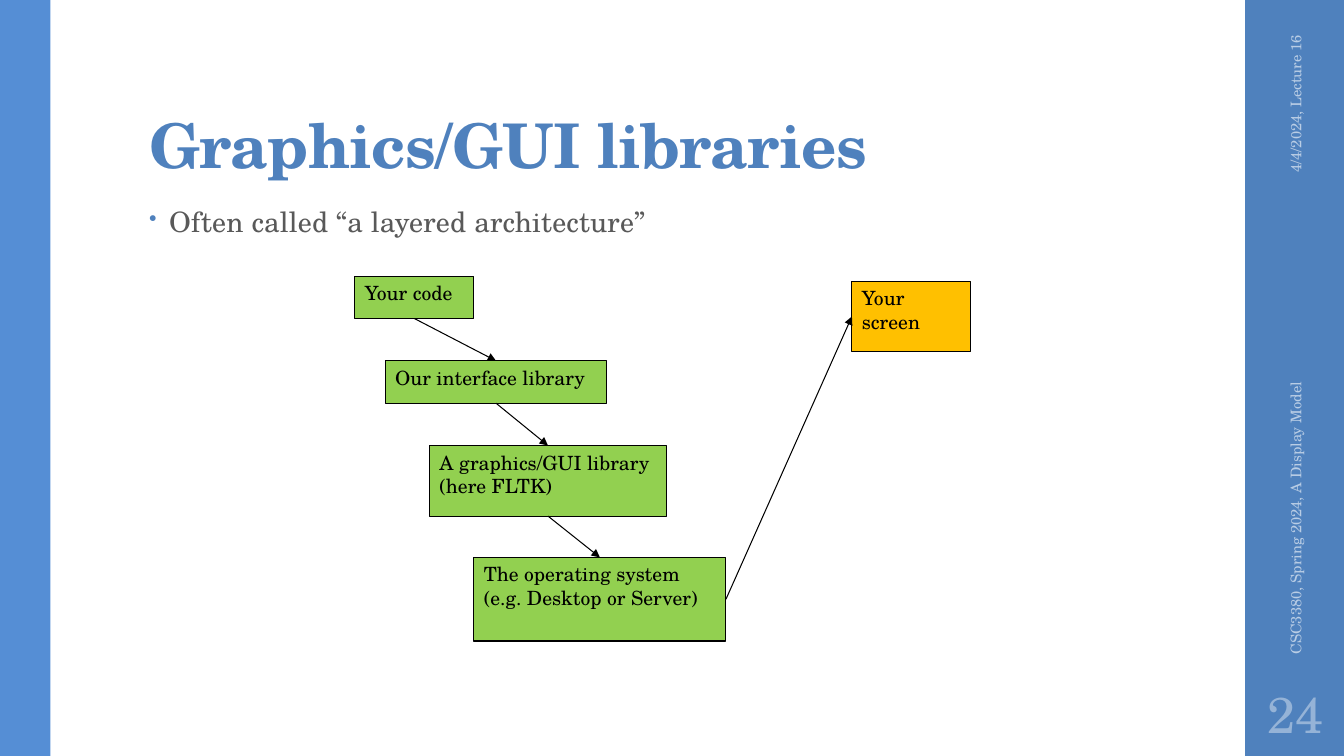
from lxml.etree import SubElement
from pptx import Presentation
from pptx.dml.color import RGBColor
from pptx.enum.shapes import MSO_CONNECTOR, MSO_SHAPE
from pptx.enum.text import MSO_ANCHOR, PP_ALIGN
from pptx.oxml.ns import qn
from pptx.util import Inches, Pt

TOP, LEFT, BOTTOM, RIGHT = range(4)


def color(hex_string):
    return RGBColor.from_string(hex_string)


class SlideBuilder:
    font = "TeX Gyre Schola"
    blue, ink = "4F81BD", "000000"
    green, amber = "92D050", "FFC000"
    line_width = Pt(0.75)

    def __init__(self, slide):
        self.s = slide

    def fill_text(self, tf, lines, size, fill, bold=False, spacing=None, **para):
        """Fill a text frame with one paragraph per line."""
        tf.word_wrap = True
        for i, line in enumerate(lines):
            p = tf.add_paragraph() if i else tf.paragraphs[0]
            for name, value in ({"alignment": PP_ALIGN.LEFT} | para).items():
                setattr(p, name, value)
            r = p.add_run()
            r.text = line
            fmt = {"name": self.font, "size": Pt(size), "bold": bold}
            for name, value in fmt.items():
                setattr(r.font, name, value)
            r.font.color.rgb = color(fill)
            if spacing is not None:
                r._r.get_or_add_rPr().set("spc", str(spacing))

    def text(self, at, line, size, fill, rotation=0, frame=None, **style):
        sp = self.s.shapes.add_textbox(*map(Inches, at))
        sp.rotation = rotation
        for name, value in (frame or {}).items():
            setattr(sp.text_frame, name, value)
        self.fill_text(sp.text_frame, [line], size, fill, **style)
        return sp

    def rect(self, at, fill, outlined=False):
        sp = self.s.shapes.add_shape(MSO_SHAPE.RECTANGLE, *map(Inches, at))
        sp.shadow.inherit = False
        sp.fill.solid()
        sp.fill.fore_color.rgb = color(fill)
        if outlined:
            sp.line.color.rgb = color(self.ink)
            sp.line.width = self.line_width
        else:
            sp.line.fill.background()
        return sp

    def box(self, at, fill, *lines):
        sp = self.rect(at, fill, outlined=True)
        sp.text_frame.vertical_anchor = MSO_ANCHOR.TOP
        self.fill_text(sp.text_frame, lines, 14, self.ink)
        return sp

    def arrow(self, start, start_side, end, end_side):
        c = self.s.shapes.add_connector(MSO_CONNECTOR.STRAIGHT, 0, 0, 0, 0)
        c.begin_connect(start, start_side)
        c.end_connect(end, end_side)
        c.line.color.rgb = color(self.ink)
        c.line.width = self.line_width
        spPr = c._element.spPr
        SubElement(spPr.find(qn("a:ln")), qn("a:tailEnd"), type="triangle")
        SubElement(spPr, qn("a:effectLst"))

    def bullet(self, sp, fill, char="•", percent=80, indent=0.2):
        for p in sp.text_frame.paragraphs:
            pPr = p._p.get_or_add_pPr()
            pPr.set("marL", str(Inches(indent)))
            pPr.set("indent", str(-Inches(indent)))
            SubElement(SubElement(pPr, qn("a:buClr")), qn("a:srgbClr"), val=fill)
            SubElement(pPr, qn("a:buSzPct"), val=str(percent * 1000))
            SubElement(pPr, qn("a:buChar"), char=char)


def main():
    prs = Presentation()
    prs.slide_width, prs.slide_height = Inches(13.33), Inches(7.5)
    b = SlideBuilder(prs.slides.add_slide(prs.slide_layouts[6]))

    # Side bars
    b.rect((12.35, 0, 0.98, 7.5), b.blue)
    b.rect((0, 0, 0.5, 7.5), "558ED5")

    # Title and bullet
    b.text((1.38, 0.32, 10.6, 1.53), "Graphics/GUI libraries", 44, b.blue,
           frame={"vertical_anchor": MSO_ANCHOR.BOTTOM, "margin_top": Inches(0.03)},
           bold=True, spacing=-50, line_spacing=0.9)
    body = b.text((1.38, 2, 9.4, 4.76), "Often called “a layered architecture”",
                  20, "595959", spacing=10, line_spacing=0.95,
                  space_before=Pt(14), space_after=Pt(2))
    b.bullet(body, b.blue)

    # Date, footer and slide number
    middle = {"vertical_anchor": MSO_ANCHOR.MIDDLE}
    narrow = middle | {"margin_left": Inches(0.05), "margin_right": Inches(0.05)}
    b.text((11.81, 1.09, 2.08, 0.4), "4/4/2024, Lecture 16", 10.5, "B9CDE5",
           270, middle, alignment=PP_ALIGN.RIGHT)
    b.text((10.89, 4.43, 3.92, 0.4), "CSC3380, Spring 2024, A Display Model",
           10.5, "B9CDE5", 270, middle)
    b.text((12.35, 6.75, 1, 0.65), "24", 36, "95B3D7", frame=narrow,
           alignment=PP_ALIGN.CENTER)

    # Layers, from the code down to the system
    layers = [
        b.box((3.52, 2.74, 1.18, 0.42), b.green, "Your code"),
        b.box((3.82, 3.58, 2.2, 0.42), b.green, "Our interface library"),
        b.box((4.26, 4.42, 2.35, 0.7), b.green,
              "A graphics/GUI library", "(here FLTK)"),
        b.box((4.7, 5.53, 2.5, 0.83), b.green,
              "The operating system", "(e.g. Desktop or Server)"),
    ]
    screen = b.box((8.45, 2.79, 1.18, 0.7), b.amber, "Your screen")

    # Arrows between layers, then out to the screen
    for upper, lower in zip(layers, layers[1:]):
        b.arrow(upper, BOTTOM, lower, TOP)
    b.arrow(layers[-1], RIGHT, screen, LEFT)

    prs.save("out.pptx")


if __name__ == "__main__":
    main()
